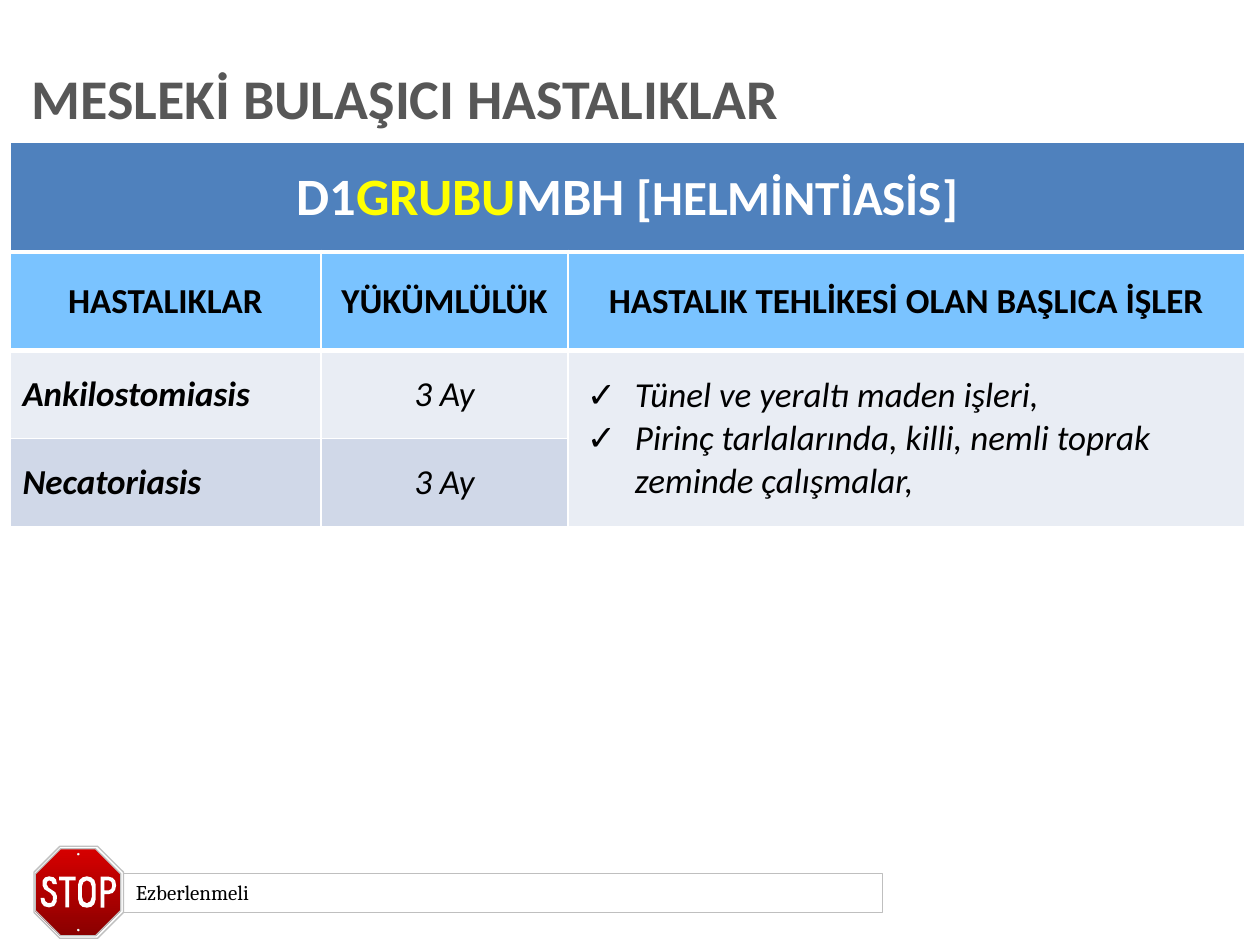
import pptx
import pptx.util
import pptx.dml.color
import pptx.enum.shapes
import pptx.enum.text
import pptx.oxml
import pptx.oxml.ns

Cm = pptx.util.Cm
Pt = pptx.util.Pt
RGB = pptx.dml.color.RGBColor.from_string
ALIGN = pptx.enum.text.PP_ALIGN
MIDDLE = pptx.enum.text.MSO_ANCHOR.MIDDLE
SHAPE = pptx.enum.shapes.MSO_SHAPE

colors = {
    "white": "FFFFFF", "black": "000000", "gray": "575757",
    "yellow": "FFFF00", "title_row": "4F81BD", "heading_row": "7AC3FF",
    "light_row": "E9EDF4", "dark_row": "D0D8E8", "silver": "C0C0C0",
    "frame": "BFBFBF", "screw": "D2D2D2", "sign_top": "D60000", "sign_bottom": "8A0000",
}


def add_span(para, text, size, color, bold=False, italic=False, name="Calibri"):
    span = para.add_run()
    span.text = text
    span.font.name = name
    span.font.size = Pt(size)
    span.font.bold = bold
    span.font.italic = italic
    span.font.color.rgb = RGB(colors[color])


def add_outline(page, contours):
    builder = page.shapes.build_freeform(*contours[0][0], scale=Cm(0.00254))
    for index, contour in enumerate(contours):
        if index:
            builder.move_to(*contour[0])
        builder.add_line_segments(contour[1:], close=True)
    outline = builder.convert_to_shape()
    outline.shadow.inherit = False
    outline.fill.solid()
    outline.fill.fore_color.rgb = RGB(colors["white"])
    outline.line.fill.background()
    return outline


deck = pptx.Presentation()
deck.slide_width = Cm(25.4)
deck.slide_height = Cm(19.05)
page = deck.slides.add_slide(deck.slide_layouts[6])

title = page.shapes.add_textbox(Cm(0.64), Cm(1.14), Cm(24.49), Cm(1.8))
title.text_frame.word_wrap = True
title.text_frame.vertical_anchor = MIDDLE
title.text_frame.margin_left = title.text_frame.margin_right = 0
para = title.text_frame.paragraphs[0]
para.line_spacing = 0.9
add_span(para, "MESLEKİ BULAŞICI HASTALIKLAR", 32, "gray", bold=True)

widths = [6.27, 4.98, 13.64]
heights = [2.21, 1.98, 1.78, 1.78]
table = page.shapes.add_table(
    4, 3, Cm(0.2), Cm(2.87), Cm(sum(widths)), Cm(sum(heights))).table
for column, width in zip(table.columns, widths):
    column.width = Cm(width)
for row, height in zip(table.rows, heights):
    row.height = Cm(height)

fills = ["title_row", "heading_row", "light_row", "dark_row"]
edges = [(1, 3), (3, 3), (3, 1), (1, 1)]
for row, fill, (top, bottom) in zip(table.rows, fills, edges):
    for cell in row.cells:
        properties = cell._tc.get_or_add_tcPr()
        for side, points in (("L", 1), ("R", 1), ("T", top), ("B", bottom)):
            properties.append(pptx.oxml.parse_xml(
                f'<a:ln{side} {pptx.oxml.ns.nsdecls("a")} w="{Pt(points)}"><a:solidFill>'
                f'<a:srgbClr val="{colors["white"]}"/></a:solidFill></a:ln{side}>'))
        cell.fill.solid()
        cell.fill.fore_color.rgb = RGB(colors[fill])
        cell.vertical_anchor = MIDDLE
table.cell(0, 0).merge(table.cell(0, 2))
table.cell(2, 2).merge(table.cell(3, 2))

para = table.cell(0, 0).text_frame.paragraphs[0]
para.alignment = ALIGN.CENTER
for text, size, color in [("D1", 30, "white"), ("GRUBU", 30, "yellow"),
                          ("MBH ", 30, "white"), ("[HELMİNTİASİS]", 28, "white")]:
    add_span(para, text, size, color, bold=True)

entries = [
    ["HASTALIKLAR", "YÜKÜMLÜLÜK", "HASTALIK TEHLİKESİ OLAN BAŞLICA İŞLER"],
    ["Ankilostomiasis", "3 Ay"],
    ["Necatoriasis", "3 Ay"],
]
for row_index, texts in enumerate(entries, start=1):
    heading = row_index == 1
    for column_index, text in enumerate(texts):
        para = table.cell(row_index, column_index).text_frame.paragraphs[0]
        para.alignment = ALIGN.CENTER if heading or column_index else ALIGN.LEFT
        add_span(para, text, 20, "black", bold=heading or column_index == 0, italic=not heading)

jobs = table.cell(2, 2)
jobs.margin_left = jobs.margin_right = jobs.margin_top = jobs.margin_bottom = 0
for index, text in enumerate(["Tünel ve yeraltı maden işleri,",
                              "Pirinç tarlalarında, killi, nemli toprak zeminde çalışmalar,"]):
    para = jobs.text_frame.add_paragraph() if index else jobs.text_frame.paragraphs[0]
    properties = para._p.get_or_add_pPr()
    properties.set("marL", str(Cm(1.35)))
    properties.set("indent", str(Cm(-0.97)))
    for element in ('buFont {} typeface="Calibri"', 'buChar {} char="✓"'):
        properties.append(pptx.oxml.parse_xml(
            "<a:" + element.format(pptx.oxml.ns.nsdecls("a")) + "/>"))
    add_span(para, text, 20, "black", italic=True)

for left, top, right, bottom, corner in [(270, 6720, 980, 7450, 205), (280, 6740, 960, 7430, 200)]:
    sign = add_outline(page, [[
        (left + corner, top), (right - corner, top), (right, top + corner),
        (right, bottom - corner), (right - corner, bottom), (left + corner, bottom),
        (left, bottom - corner), (left, top + corner)]])
    sign.line.color.rgb = RGB(colors["silver"])
    sign.line.width = Pt(0.75)
sign.fill.gradient()
sign.fill.gradient_angle = 270
for stop, color, position in zip(sign.fill.gradient_stops, ["sign_top", "sign_bottom"], [0, 1]):
    stop.color.rgb = RGB(colors[color])
    stop.position = position

letter_s = [[(420, 7020), (452, 7020), (445, 6985), (425, 6965), (390, 6958), (358, 6967),
             (340, 6990), (338, 7030), (352, 7060), (400, 7090), (420, 7115), (420, 7145),
             (408, 7168), (380, 7170), (360, 7155), (352, 7130), (322, 7130), (330, 7170),
             (350, 7195), (390, 7205), (430, 7193), (450, 7160), (452, 7115), (440, 7085),
             (385, 7048), (370, 7020), (376, 6998), (390, 6990), (410, 6998)]]
letter_t = [[(470, 6960), (600, 6960), (600, 6990), (550, 6990), (550, 7205),
             (520, 7205), (520, 6990), (470, 6990)]]
letter_o = [[(690, 6958), (655, 6967), (630, 6990), (620, 7025), (620, 7140), (632, 7180),
             (655, 7200), (690, 7207), (725, 7200), (748, 7180), (760, 7140), (760, 7025),
             (750, 6990), (725, 6967)],
            [(690, 6990), (662, 7005), (650, 7040), (650, 7120), (662, 7157), (690, 7172),
             (718, 7157), (730, 7120), (730, 7040), (718, 7005)]]
letter_p = [[(800, 6960), (860, 6960), (895, 6970), (915, 6993), (922, 7030), (915, 7065),
             (895, 7090), (860, 7100), (830, 7100), (830, 7207), (800, 7207)],
            [(830, 6990), (830, 7070), (865, 7070), (885, 7058), (892, 7030),
             (885, 7002), (865, 6990)]]
for letter in (letter_s, letter_t, letter_o, letter_p):
    add_outline(page, letter)

for middle in (17.22, 18.75):
    for diameter, color in ((0.05, "screw"), (0.03, "white")):
        screw = page.shapes.add_shape(
            SHAPE.OVAL, Cm(1.58 - diameter / 2), Cm(middle - diameter / 2),
            Cm(diameter), Cm(diameter))
        screw.shadow.inherit = False
        screw.fill.solid()
        screw.fill.fore_color.rgb = RGB(colors[color])
        screw.line.fill.background()

note = page.shapes.add_shape(SHAPE.RECTANGLE, Cm(2.49), Cm(17.6), Cm(15.29), Cm(0.79))
note.shadow.inherit = False
note.fill.background()
note.line.color.rgb = RGB(colors["frame"])
note.line.width = Pt(0.25)
note.text_frame.word_wrap = True
note.text_frame.vertical_anchor = MIDDLE
para = note.text_frame.paragraphs[0]
para.alignment = ALIGN.LEFT
add_span(para, "Ezberlenmeli", 12, "black", name="Cambria")

deck.save("out.pptx")
